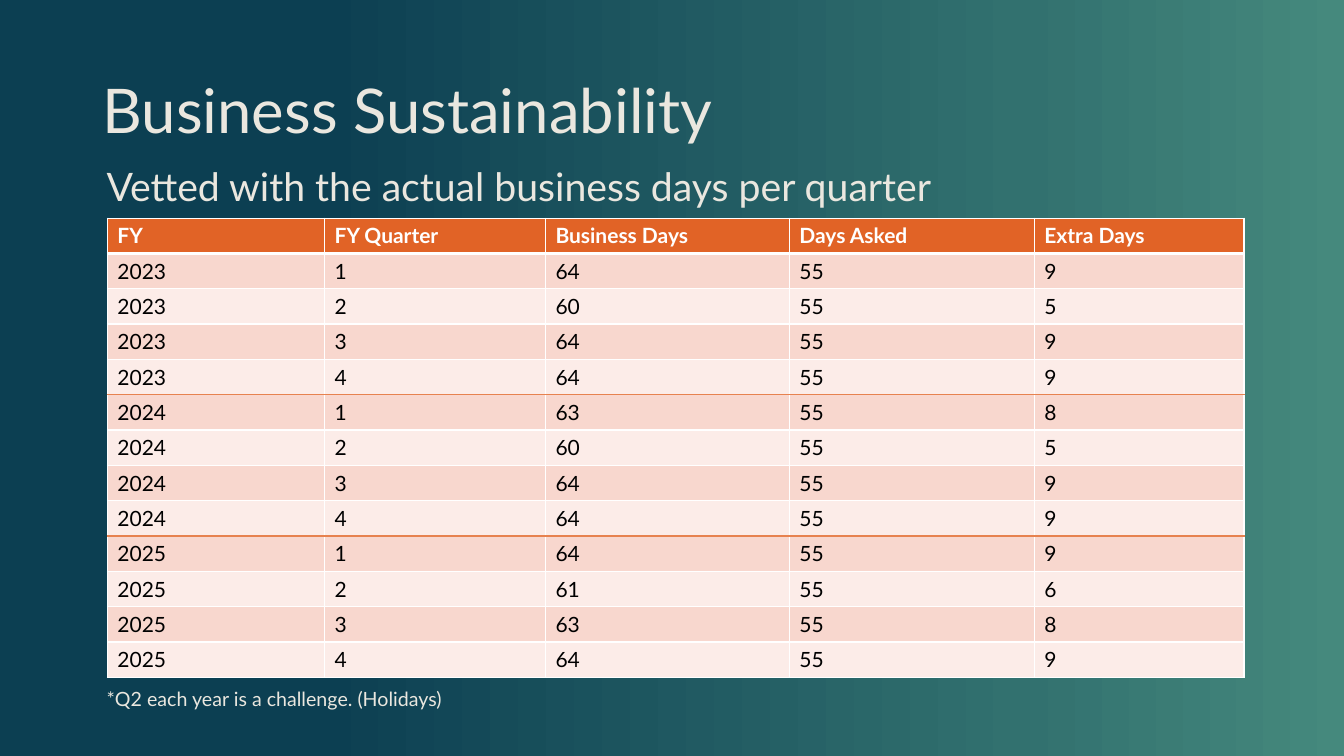
import copy
import dataclasses

import lxml.etree
import pptx
import pptx.dml.color
import pptx.enum.text
import pptx.oxml.ns
import pptx.slide
import pptx.table
import pptx.text.text
import pptx.util


@dataclasses.dataclass(frozen=True)
class Theme:
    font: str = "Lato"
    gradient: tuple[tuple[float, str], ...] = ((0.24, "0C3F52"), (0.76, "32716F"), (1.0, "45897D"))
    light_text: str = "EAE7DF"
    header_text: str = "FFFFFF"
    body_text: str = "000000"
    header_fill: str = "E16326"
    band_fills: tuple[str, str] = ("F8D7CE", "FCECE8")
    grid_line: str = "FFFFFF"
    year_line: str = "E7824F"
    title_size: float = 44
    subtitle_size: float = 28
    table_size: float = 15
    note_size: float = 14


@dataclasses.dataclass(frozen=True)
class Caption:
    text: str
    left: float
    top: float
    height: float
    size: float


@dataclasses.dataclass(frozen=True)
class Border:
    color: str
    width: float = 1


@dataclasses.dataclass(frozen=True)
class RowStyle:
    fill: str
    text_color: str
    bold: bool
    top: Border
    bottom: Border


THEME = Theme()
CAPTION_WIDTH = 828
CAPTIONS = (
    Caption("Business Sustainability", 66.2, 28.8, 104.4, THEME.title_size),
    Caption("Vetted with the actual business days per quarter", 69.1, 82.8, 104.4, THEME.subtitle_size),
    Caption("*Q2 each year is a challenge. (Holidays)", 69.1, 481, 38.9, THEME.note_size),
)
HEADERS = ("FY", "FY Quarter", "Business Days", "Days Asked", "Extra Days")
COLUMN_WIDTHS = (155.2, 157.7, 174.2, 175, 149.8)
TABLE_LEFT, TABLE_TOP, ROW_HEIGHT = 76.7, 155.8, 25.2
DAYS_ASKED = 55
QUARTERS = 4
BUSINESS_DAYS = {2023: (64, 60, 64, 64), 2024: (63, 60, 64, 64), 2025: (64, 61, 63, 64)}


def rgb(color: str) -> pptx.dml.color.RGBColor:
    return pptx.dml.color.RGBColor.from_string(color)


def write_text(frame: pptx.text.text.TextFrame, text: str, *, size: float, color: str,
               bold: bool = False, line_spacing: float = 1.0) -> None:
    paragraph = frame.paragraphs[0]
    paragraph.line_spacing = line_spacing
    run = paragraph.add_run()
    run.text = text
    run.font.name = THEME.font
    run.font.size = pptx.util.Pt(size)
    run.font.bold = bold
    run.font.color.rgb = rgb(color)


def paint_background(slide: pptx.slide.Slide) -> None:
    fill = slide.background.fill
    fill.gradient()
    fill.gradient_angle = 0
    stop_list = slide.element.find(f".//{pptx.oxml.ns.qn('a:gsLst')}")
    stop_list.append(copy.deepcopy(stop_list[0]))
    for stop, (position, color) in zip(fill.gradient_stops, THEME.gradient):
        stop.position = position
        stop.color.rgb = rgb(color)


def add_caption(slide: pptx.slide.Slide, caption: Caption) -> None:
    shape = slide.shapes.add_textbox(*map(pptx.util.Pt, (caption.left, caption.top, CAPTION_WIDTH, caption.height)))
    shape.text_frame.word_wrap = True
    shape.text_frame.vertical_anchor = pptx.enum.text.MSO_ANCHOR.MIDDLE
    write_text(shape.text_frame, caption.text, size=caption.size, color=THEME.light_text, line_spacing=0.9)


def add_border(cell: pptx.table._Cell, side: str, border: Border) -> None:
    qualified = pptx.oxml.ns.qn
    properties = cell._tc.get_or_add_tcPr()
    line = lxml.etree.SubElement(properties, qualified(f"a:ln{side}"), w=str(pptx.util.Pt(border.width)))
    fill = lxml.etree.SubElement(line, qualified("a:solidFill"))
    lxml.etree.SubElement(fill, qualified("a:srgbClr"), val=border.color)


def row_style(index: int) -> RowStyle:
    grid, year, heavy = Border(THEME.grid_line), Border(THEME.year_line), Border(THEME.grid_line, 3)
    last = len(BUSINESS_DAYS) * QUARTERS
    if index == 0:
        return RowStyle(THEME.header_fill, THEME.header_text, True, grid, heavy)
    starts_year = index % QUARTERS == 1
    ends_year = index % QUARTERS == 0 and index < last
    top = heavy if index == 1 else year if starts_year else grid
    bottom = year if ends_year else grid
    return RowStyle(THEME.band_fills[(index - 1) % 2], THEME.body_text, False, top, bottom)


def add_days_table(slide: pptx.slide.Slide) -> None:
    rows = [HEADERS] + [
        (year, quarter, days, DAYS_ASKED, days - DAYS_ASKED)
        for year, year_days in BUSINESS_DAYS.items()
        for quarter, days in enumerate(year_days, start=1)
    ]
    bounds = (TABLE_LEFT, TABLE_TOP, sum(COLUMN_WIDTHS), ROW_HEIGHT * len(rows))
    table = slide.shapes.add_table(len(rows), len(HEADERS), *map(pptx.util.Pt, bounds)).table
    for column, width in zip(table.columns, COLUMN_WIDTHS):
        column.width = pptx.util.Pt(width)
    for row_index, values in enumerate(rows):
        table.rows[row_index].height = pptx.util.Pt(ROW_HEIGHT)
        style = row_style(row_index)
        grid = Border(THEME.grid_line)
        for column_index, value in enumerate(values):
            cell = table.cell(row_index, column_index)
            for side, border in (("L", grid), ("R", grid), ("T", style.top), ("B", style.bottom)):
                add_border(cell, side, border)
            cell.fill.solid()
            cell.fill.fore_color.rgb = rgb(style.fill)
            write_text(cell.text_frame, str(value), size=THEME.table_size, color=style.text_color, bold=style.bold)


def main() -> None:
    presentation = pptx.Presentation()
    presentation.slide_width = pptx.util.Pt(960)
    presentation.slide_height = pptx.util.Pt(540)
    slide = presentation.slides.add_slide(presentation.slide_layouts[6])
    paint_background(slide)
    add_days_table(slide)
    for caption in CAPTIONS:
        add_caption(slide, caption)
    presentation.save("out.pptx")


if __name__ == "__main__":
    main()
